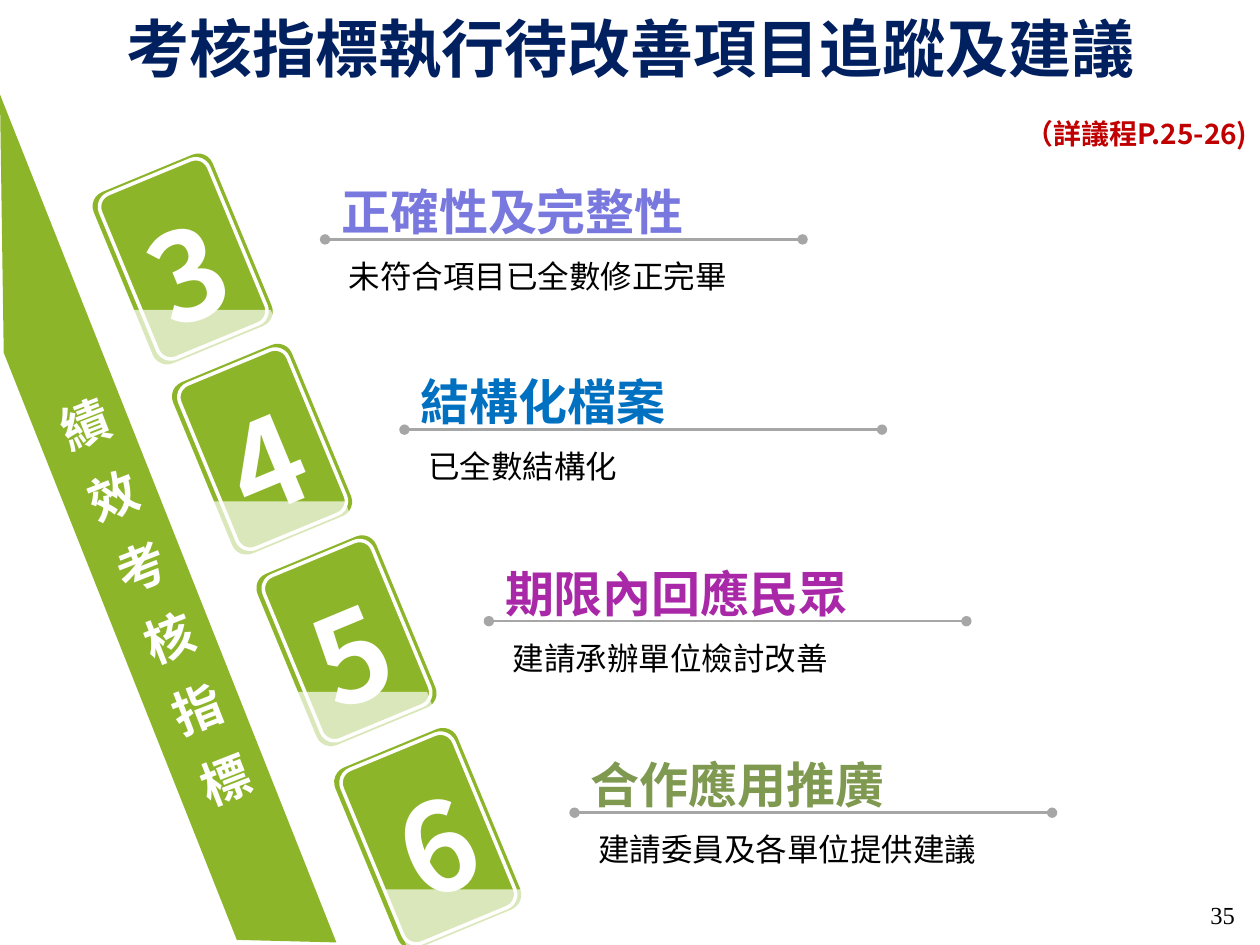
from lxml.etree import SubElement
from pptx import Presentation
from pptx.dml.color import RGBColor
from pptx.enum.shapes import MSO_CONNECTOR, MSO_SHAPE
from pptx.enum.text import MSO_ANCHOR, PP_ALIGN
from pptx.oxml.ns import qn
from pptx.util import Inches, Pt

GREEN = RGBColor(0x8D, 0xB5, 0x29)
WHITE = RGBColor(0xFF, 0xFF, 0xFF)
BLACK = RGBColor(0x00, 0x00, 0x00)
GRAY = RGBColor(0xA6, 0xA6, 0xA6)
NAVY = RGBColor(0x00, 0x20, 0x60)
RED = RGBColor(0xC0, 0x00, 0x00)
LAVENDER = RGBColor(0x78, 0x78, 0xDE)
BLUE = RGBColor(0x00, 0x70, 0xC0)
PURPLE = RGBColor(0xA8, 0x28, 0xA8)
OLIVE = RGBColor(0x7F, 0x99, 0x51)

SANS_SC = "Noto Sans CJK SC"
SANS_KR = "Noto Sans CJK KR"
TILT = 337.5

ITEMS = [
    ("3", "正確性及完整性", "未符合項目已全數修正完畢", LAVENDER, 0.94, 1.32),
    ("4", "結構化檔案", "已全數結構化", BLUE, 1.57, 2.83),
    ("5", "期限內回應民眾", "建請承辦單位檢討改善", PURPLE, 2.24, 4.35),
    ("6", "合作應用推廣", "建請委員及各單位提供建議", OLIVE, 2.92, 5.87),
]
CARDS = [
    (0.94, 1.32, 1.02, 1.47, 1.05, 2.46),
    (1.57, 2.83, 1.02, 1.47, 1.64, 3.98),
    (2.24, 4.35, 1.02, 1.47, 2.29, 5.49),
    (2.87, 5.88, 1.05, 1.55, 3.04, 7.06),
]
BAND = [(0, 0.75), (2.67, 7.48), (1.88, 7.46), (0.03, 2.8)]


def bezier(p0, p1, p2, p3, steps=8):
    """Return points along a cubic curve, both ends included."""
    pts = []
    for i in range(steps + 1):
        t = i / steps
        u = 1 - t
        pts.append(tuple(
            u**3 * a + 3 * u * u * t * b + 3 * u * t * t * c + t**3 * d
            for a, b, c, d in zip(p0, p1, p2, p3)))
    return pts


GLASS = [
    (0, 0), (1.1, 0),
    *bezier((1.16, 0.16), (1.19, 0.22), (1.16, 0.29), (1.1, 0.32)),
    *bezier((0.39, 0.61), (0.32, 0.64), (0.25, 0.61), (0.23, 0.55)),
]


def add_text(s, text, x, y, w, h, size, color, font=SANS_SC, bold=False,
             align=PP_ALIGN.LEFT, spacing=None, rotation=0):
    """Add a one-paragraph text box and return it."""
    sp = s.shapes.add_textbox(Inches(x), Inches(y), Inches(w), Inches(h))
    sp.rotation = rotation
    tf = sp.text_frame
    tf.word_wrap = True
    tf.vertical_anchor = MSO_ANCHOR.TOP
    p = tf.paragraphs[0]
    p.text = text
    p.alignment = align
    if spacing:
        p.line_spacing = spacing
    p.font.size = Pt(size)
    p.font.bold = bold
    p.font.color.rgb = color
    p.font.name = font
    props = p._p.pPr.find(qn("a:defRPr"))
    SubElement(props, qn("a:ea")).set("typeface", font)
    return sp


def add_round_rect(s, x, y, w, h, fill=None, line=None):
    """Add a tilted rounded rectangle, filled or outlined."""
    sp = s.shapes.add_shape(MSO_SHAPE.ROUNDED_RECTANGLE,
                            Inches(x), Inches(y), Inches(w), Inches(h))
    sp.adjustments[0] = 0.12
    sp.rotation = TILT
    sp.shadow.inherit = False
    if fill is None:
        sp.fill.background()
    else:
        sp.fill.solid()
        sp.fill.fore_color.rgb = fill
    if line is None:
        sp.line.fill.background()
    else:
        sp.line.color.rgb = line
        sp.line.width = Pt(2)


def add_polygon(s, pts, color, opacity=100):
    """Add a closed outline through points given in inches."""
    pts = [(Inches(x), Inches(y)) for x, y in pts]
    fb = s.shapes.build_freeform(*pts[0])
    fb.add_line_segments(pts[1:], close=True)
    sp = fb.convert_to_shape()
    sp.shadow.inherit = False
    sp.fill.solid()
    sp.fill.fore_color.rgb = color
    sp.line.fill.background()
    if opacity < 100:
        clr = sp._element.spPr.find(qn("a:solidFill"))[0]
        SubElement(clr, qn("a:alpha")).set("val", str(opacity * 1000))


def add_rule(s, x, y, length):
    """Add a horizontal line with a dot at each end."""
    cx = s.shapes.add_connector(MSO_CONNECTOR.STRAIGHT, Inches(x), Inches(y),
                                Inches(x + length), Inches(y))
    cx.line.color.rgb = GRAY
    cx.line.width = Pt(1.5)
    ln = cx.line._get_or_add_ln()
    for end in ("a:headEnd", "a:tailEnd"):
        SubElement(ln, qn(end)).set("type", "oval")
    SubElement(cx._element.spPr, qn("a:effectLst"))


def add_card(s, x, y, w, h, glass_x, glass_y):
    """Add a tilted card with its inner frame and pale lower part."""
    add_round_rect(s, x, y, w, h, fill=GREEN)
    add_round_rect(s, x + 0.05, y + 0.03, w - 0.09, h - 0.06, line=WHITE)
    scale = w / 1.02
    add_polygon(s, [(glass_x + scale * dx, glass_y + scale * dy)
                    for dx, dy in GLASS], WHITE, 68)


def add_item(s, number, heading, detail, color, x, y):
    """Add the number, heading, rule and detail of one indicator."""
    add_text(s, number, x + 0.06, y - 0.15, 0.88, 1.46, 70, WHITE, SANS_KR,
             True, PP_ALIGN.JUSTIFY, 1.3, TILT)
    add_text(s, detail, x + 1.73, y + 0.67, 4.02, 0.38, 18, BLACK,
             align=PP_ALIGN.JUSTIFY)
    add_text(s, heading, x + 1.67, y + 0.07, 3.35, 0.57, 28, color, bold=True)
    add_rule(s, x + 1.64, y + 0.58, 3.79)


def main():
    """Build the slide and save it."""
    prs = Presentation()
    prs.slide_width, prs.slide_height = Inches(10), Inches(7.5)
    s = prs.slides.add_slide(prs.slide_layouts[6])
    for card, item in zip(CARDS, ITEMS):
        add_card(s, *card)
        add_item(s, *item)
    add_polygon(s, BAND, GREEN)
    label = add_text(s, "績效考核指標", -0.71, 4.43, 3.88, 0.69, 28, WHITE,
                     SANS_KR, True, PP_ALIGN.CENTER, 1.3, 68.5)
    label.text_frame._txBody.bodyPr.set("vert", "vert270")
    add_text(s, "考核指標執行待改善項目追蹤及建議", 0.01, 0.03, 9.99, 0.89, 36,
             NAVY, bold=True, align=PP_ALIGN.CENTER)
    add_text(s, "（詳議程P.25-26)", 7.94, 0.88, 2.06, 0.37, 16, RED,
             bold=True, align=PP_ALIGN.RIGHT)
    add_text(s, "35", 9.13, 7.09, 0.77, 0.24, 14, BLACK, "Times New Roman",
             align=PP_ALIGN.RIGHT)
    prs.save("out.pptx")


if __name__ == "__main__":
    main()
